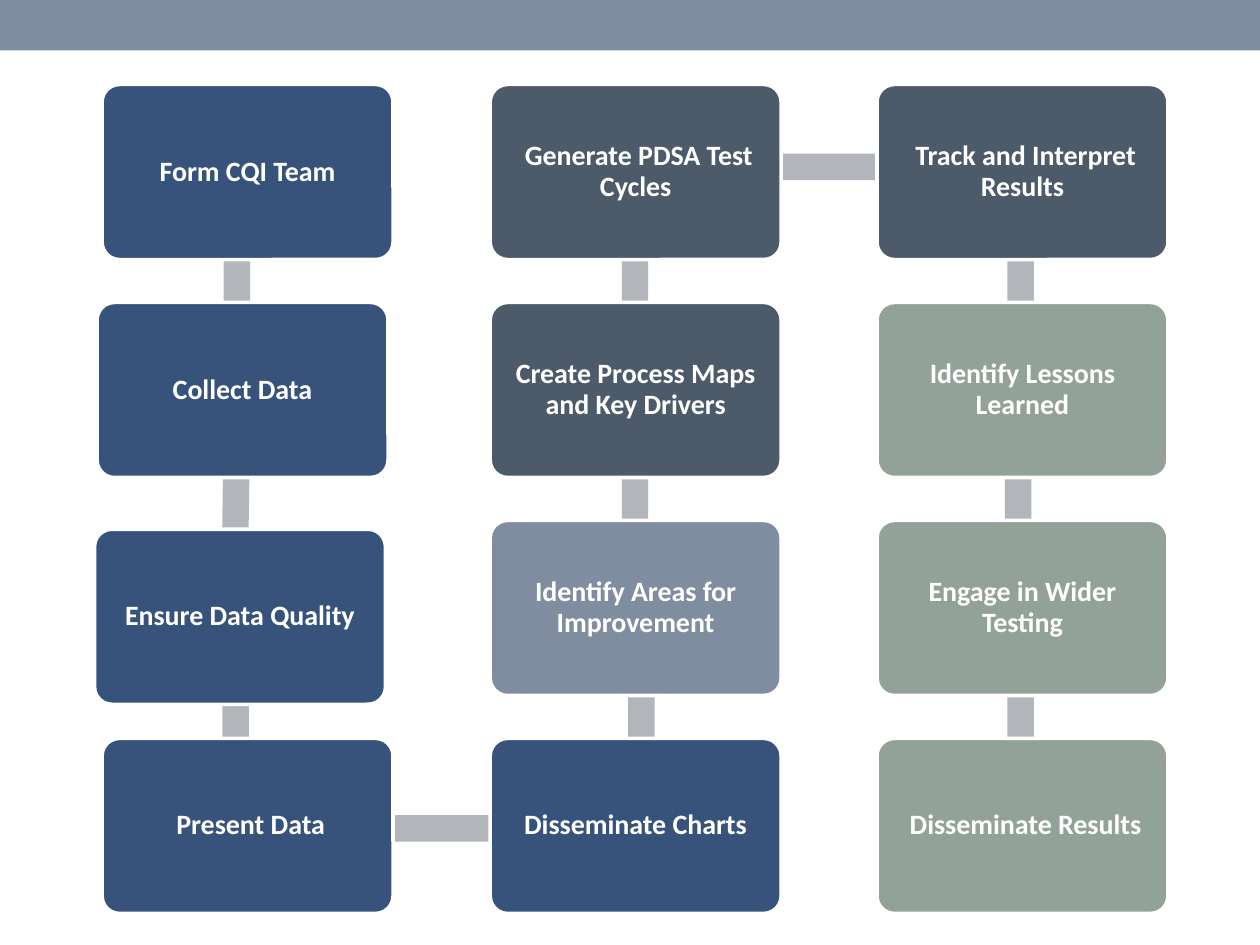
"""Build a slide with a three-column quality improvement flow of linked boxes."""
from typing import NamedTuple

import pptx
import pptx.dml.color
import pptx.enum.shapes
import pptx.enum.text
import pptx.util

PX = 9144
SHAPE = pptx.enum.shapes.MSO_SHAPE
NAVY, SLATE, STEEL, SAGE = "37537B", "4C5A6A", "808DA0", "93A299"
GREY, WHITE = "B2B5B9", "FFFFFF"
BOX_W, BOX_H, LINK_H = 231, 139, 21
COLUMNS = (81, 389, 696)
ROW_TOP, ROW_STEP = 67, 173


class Box(NamedTuple):
    text: str
    col: int
    row: int
    color: str
    dx: int = 0
    dy: int = 0


class Link(NamedTuple):
    left: int
    top: int
    length: int
    rotation: float = 0


BOXES = [
    Box("Form CQI Team", 0, 0, NAVY),
    Box("Collect Data", 0, 1, NAVY, dx=-4),
    Box("Ensure Data Quality", 0, 2, NAVY, dx=-6, dy=7),
    Box(" Present Data", 0, 3, NAVY),
    Box("Disseminate Charts", 1, 3, NAVY),
    Box("Identify Areas for Improvement", 1, 2, STEEL),
    Box("Create Process Maps and Key Drivers", 1, 1, SLATE),
    Box(" Generate PDSA Test Cycles", 1, 0, SLATE),
    Box(" Track and Interpret Results", 2, 0, SLATE),
    Box("Identify Lessons Learned", 2, 1, SAGE),
    Box("Engage in Wider Testing", 2, 2, SAGE),
    Box(" Disseminate Results", 2, 3, SAGE),
]

LINKS = [
    Link(101, 176, 174, 90),
    Link(98, 359, 179, 90.8),
    Link(104, 540, 166, 90),
    Link(128, 647, 306),
    Link(423, 533, 172, 270),
    Link(418, 347, 172, 270),
    Link(418, 180, 172, 270),
    Link(434, 122, 306),
    Link(724, 178, 172, 90),
    Link(722, 350, 172, 90),
    Link(724, 518, 172, 90),
]


def rgb(value: str) -> pptx.dml.color.RGBColor:
    return pptx.dml.color.RGBColor.from_string(value)


def add_block(slide, kind, left: int, top: int, width: int, height: int, color: str):
    sp = slide.shapes.add_shape(kind, left * PX, top * PX, width * PX, height * PX)
    sp.shadow.inherit = False
    sp.fill.solid()
    sp.fill.fore_color.rgb = rgb(color)
    sp.line.fill.background()
    return sp


def add_link(slide, link: Link) -> None:
    sp = add_block(slide, SHAPE.RECTANGLE, link.left, link.top, link.length, LINK_H, GREY)
    sp.rotation = link.rotation


def add_box(slide, box: Box) -> None:
    left = COLUMNS[box.col] + box.dx
    top = ROW_TOP + box.row * ROW_STEP + box.dy
    sp = add_block(slide, SHAPE.ROUNDED_RECTANGLE, left, top, BOX_W, BOX_H, box.color)
    sp.adjustments[0] = 0.1
    sp.line.color.rgb = rgb(WHITE)
    sp.line.width = pptx.util.Pt(2.08)

    tf = sp.text_frame
    tf.word_wrap = True
    tf.vertical_anchor = pptx.enum.text.MSO_ANCHOR.MIDDLE
    tf.margin_left = tf.margin_right = tf.margin_top = tf.margin_bottom = 7 * PX
    p = tf.paragraphs[0]
    p.alignment = pptx.enum.text.PP_ALIGN.CENTER
    p.line_spacing = 0.9
    r = p.add_run()
    r.text = box.text
    r.font.name = "Calibri"
    r.font.size = pptx.util.Pt(16)
    r.font.bold = True
    r.font.color.rgb = rgb(WHITE)


def main() -> None:
    prs = pptx.Presentation()
    prs.slide_width, prs.slide_height = 1000 * PX, 750 * PX
    slide = prs.slides.add_slide(prs.slide_layouts[6])
    add_block(slide, SHAPE.RECTANGLE, 0, 0, 1000, 40, STEEL)
    for link in LINKS:
        add_link(slide, link)
    for box in BOXES:
        add_box(slide, box)
    prs.save("out.pptx")


if __name__ == "__main__":
    main()
